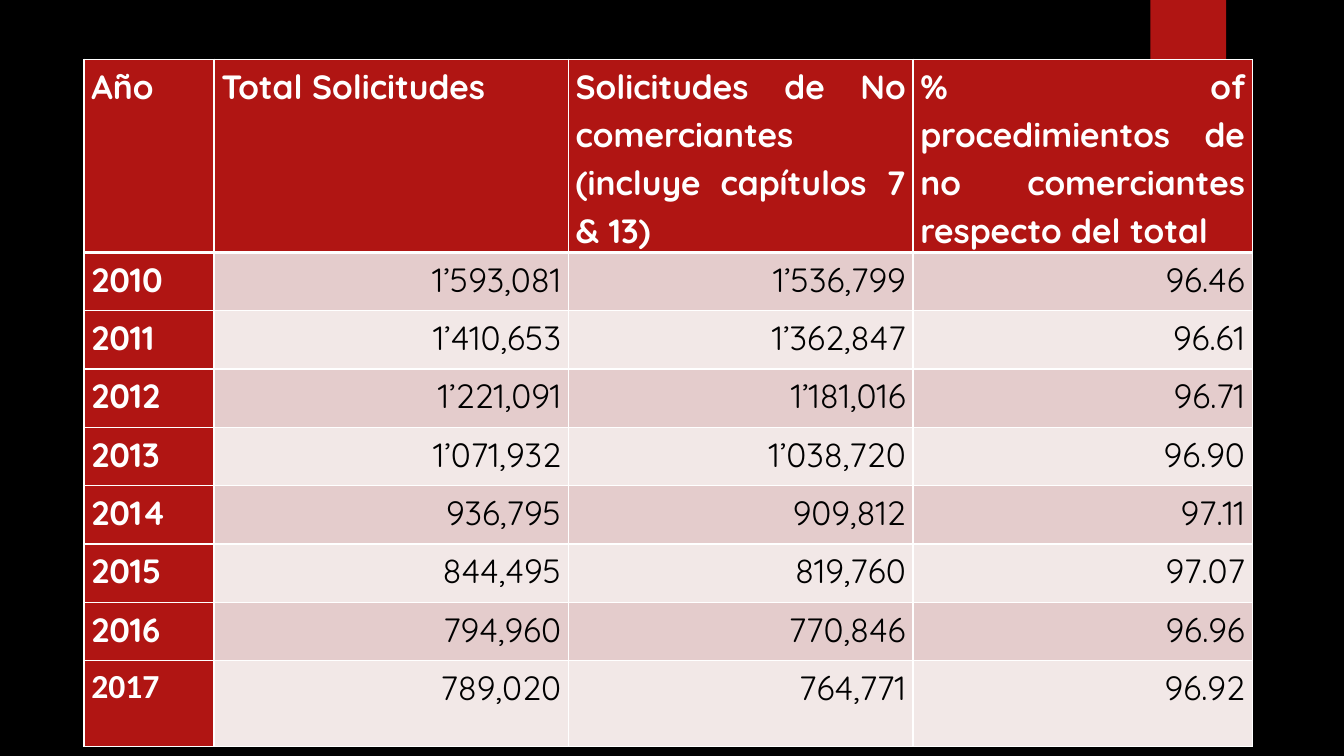
from lxml.etree import SubElement
from pptx import Presentation
from pptx.dml.color import RGBColor
from pptx.enum.shapes import MSO_SHAPE
from pptx.enum.text import PP_ALIGN
from pptx.oxml.ns import qn
from pptx.util import Pt

# Content
HEADINGS = [
    "Año",
    "Total Solicitudes",
    "Solicitudes de No comerciantes (incluye capítulos 7 & 13)",
    "% of procedimientos de no comerciantes respecto del total",
]
FILINGS = [
    ("2010", "1’593,081", "1’536,799", "96.46"),
    ("2011", "1’410,653", "1’362,847", "96.61"),
    ("2012", "1’221,091", "1’181,016", "96.71"),
    ("2013", "1’071,932", "1’038,720", "96.90"),
    ("2014", "936,795", "909,812", "97.11"),
    ("2015", "844,495", "819,760", "97.07"),
    ("2016", "794,960", "770,846", "96.96"),
    ("2017", "789,020", "764,771", "96.92"),
]

# Style and measures, in points
RED, WHITE, BLACK = "B01513", "FFFFFF", "000000"
BANDS = ["E4CCCC", "F2E8E7"]
COLUMN_WIDTHS = [92.9, 253.1, 246.2, 242.3]
ROW_HEIGHTS = [128.2] + [41.65] * 7 + [61.2]
TABLE_LEFT, TABLE_TOP = 60, 42.3
THIN, THICK = 1, 3


def color(hex_code):
    return RGBColor.from_string(hex_code)


def paint(fill, hex_code):
    fill.solid()
    fill.fore_color.rgb = color(hex_code)


def add_borders(cell, widths):
    """Draw white cell edges; widths maps a side (L, R, T, B) to points."""
    properties = cell._tc.get_or_add_tcPr()
    for side, width in widths.items():
        edge = SubElement(properties, qn(f"a:ln{side}"), w=str(Pt(width)))
        edge_fill = SubElement(edge, qn("a:solidFill"))
        SubElement(edge_fill, qn("a:srgbClr"), val=WHITE)


def fill_cell(cell, text, row, column):
    is_label = row == 0 or column == 0
    add_borders(cell, {
        "L": THIN,
        "R": THIN,
        "T": THICK if row == 1 else THIN,
        "B": THICK if row == 0 else THIN,
    })
    paint(cell.fill, RED if is_label else BANDS[(row - 1) % 2])
    cell.margin_left = cell.margin_right = Pt(5.2)
    cell.margin_top = cell.margin_bottom = 0

    cell.text_frame.text = text
    paragraph = cell.text_frame.paragraphs[0]
    paragraph.alignment = PP_ALIGN.JUSTIFY if is_label else PP_ALIGN.RIGHT
    paragraph.line_spacing = 1.15
    font = paragraph.runs[0].font
    font.name = "Calibri" if text == "2017" else "Quicksand"
    font.size = Pt(24)
    font.bold = is_label
    font.color.rgb = color(WHITE if is_label else BLACK)


# Slide
deck = Presentation()
deck.slide_width, deck.slide_height = Pt(960), Pt(540)
slide = deck.slides.add_slide(deck.slide_layouts[6])
paint(slide.background.fill, BLACK)

# Red tab at the top edge
tab = slide.shapes.add_shape(MSO_SHAPE.RECTANGLE, Pt(821.8), 0, Pt(54), Pt(90))
tab.shadow.inherit = False
paint(tab.fill, RED)
tab.line.fill.background()

# Table of filings by year
rows = [HEADINGS, *FILINGS]
table = slide.shapes.add_table(
    len(rows), len(HEADINGS), Pt(TABLE_LEFT), Pt(TABLE_TOP),
    Pt(sum(COLUMN_WIDTHS)), Pt(sum(ROW_HEIGHTS)),
).table
table.first_col = True
for column, width in zip(table.columns, COLUMN_WIDTHS):
    column.width = Pt(width)
for row, height in zip(table.rows, ROW_HEIGHTS):
    row.height = Pt(height)
for row, texts in enumerate(rows):
    for column, text in enumerate(texts):
        fill_cell(table.cell(row, column), text, row, column)

deck.save("out.pptx")
